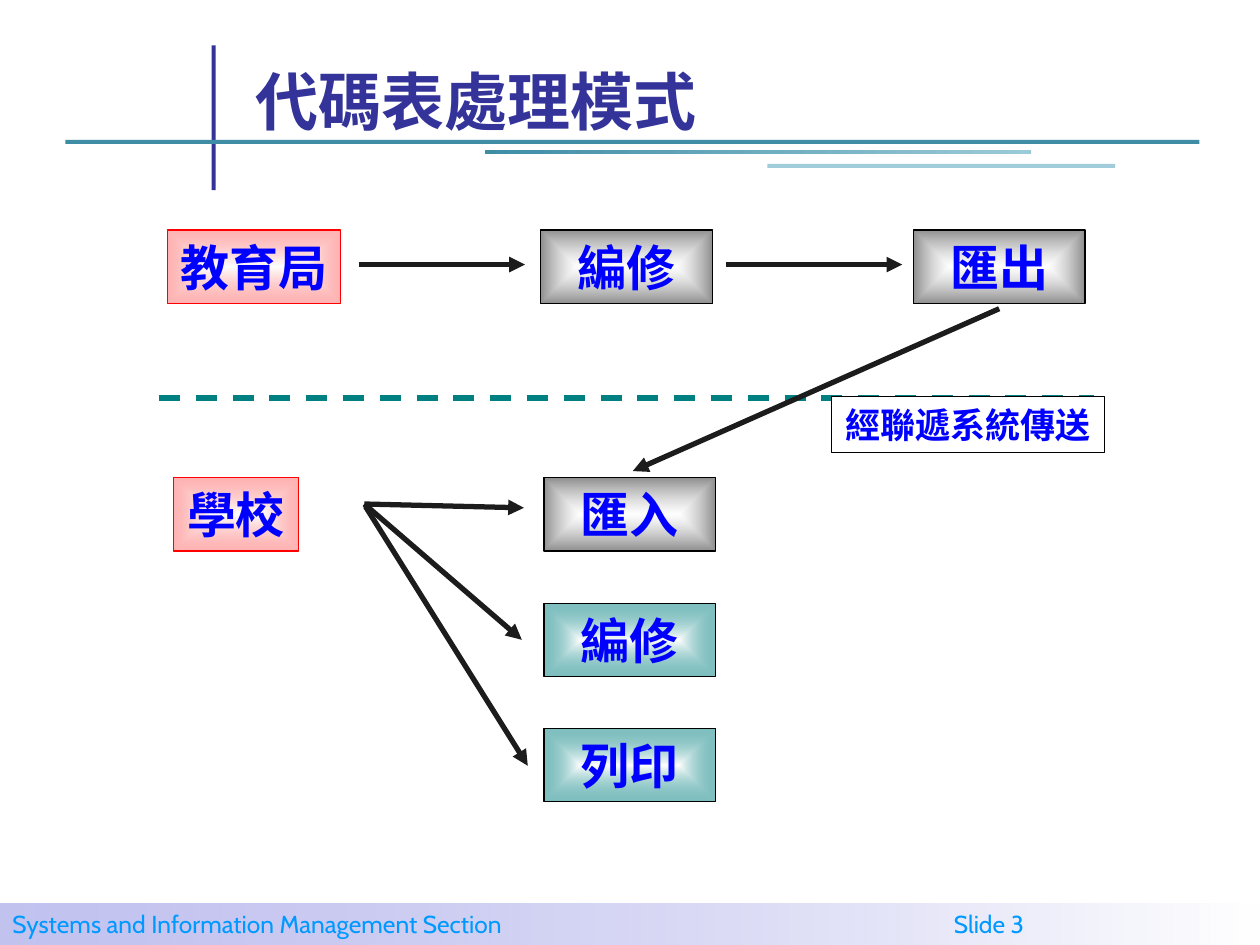
from lxml import etree
from pptx import Presentation
from pptx.dml.color import RGBColor
from pptx.enum.dml import MSO_LINE
from pptx.enum.shapes import MSO_CONNECTOR, MSO_SHAPE
from pptx.enum.text import MSO_ANCHOR, PP_ALIGN
from pptx.oxml import parse_xml
from pptx.oxml.ns import nsdecls, qn
from pptx.util import Pt

NAVY = RGBColor(0x33, 0x33, 0x99)
INDIGO = RGBColor(0x33, 0x33, 0xCC)
STEEL = RGBColor(0x3F, 0x8D, 0xA5)
PALE_STEEL = RGBColor(0x9B, 0xCA, 0xD9)
LIGHT_STEEL = RGBColor(0xA1, 0xCD, 0xDB)
SKY = RGBColor(0x00, 0x99, 0xFF)
BLUE = RGBColor(0x00, 0x00, 0xFF)
RED = RGBColor(0xFF, 0x00, 0x00)
TEAL = RGBColor(0x00, 0x80, 0x80)
CHARCOAL = RGBColor(0x1C, 0x1C, 0x1C)
BLACK = RGBColor(0x00, 0x00, 0x00)
WHITE = RGBColor(0xFF, 0xFF, 0xFF)

CJK = "Noto Sans CJK SC"
LATIN = "Cabin"

# Gradient stops as (colour, opacity in percent), centre to edge or left to right
ACTOR = [(WHITE, 50), (RED, 30)]
TRANSFER = [(WHITE, 30), (CHARCOAL, 50)]
LOCAL = [(WHITE, 100), (TEAL, 50)]
RULE_FADE = [(STEEL, 100), (PALE_STEEL, 100)]
FOOTER_FADE = [(INDIGO, 30), (WHITE, 50)]

# Left, top, width, height, fill
RULES = [
    (121, 25.9, 2.2, 82.8, NAVY),
    (37.4, 79.9, 648, 2.3, STEEL),
    (277.2, 85.7, 311.8, 2.3, RULE_FADE),
    (438.5, 93.6, 198.7, 2.3, LIGHT_STEEL),
]
TITLE = "代碼表處理模式"
FOOTER = ("Systems and Information Management Section", "Slide 3")

BUREAU_TOP, SCHOOL_TOP, STEP_PITCH = 131.5, 273, 71.7
BOX_W, BOX_H = 98, 41.8
# Text, left, top, width, fill, outline
BOXES = [
    ("教育局", 95.6, BUREAU_TOP, 99.2, ACTOR, RED),
    ("編修", 309, BUREAU_TOP, BOX_W, TRANSFER, BLACK),
    ("匯出", 522, BUREAU_TOP, BOX_W, TRANSFER, BLACK),
    ("學校", 99.2, SCHOOL_TOP, 71.3, ACTOR, RED),
] + [
    (text, 310.8, SCHOOL_TOP + i * STEP_PITCH, BOX_W, fill, BLACK)
    for i, (text, fill) in enumerate(
        [("匯入", TRANSFER), ("編修", LOCAL), ("列印", LOCAL)])
]
DIVIDER = (90.8, 227.4, 625, 227.4)
ARROWS = [
    (205.2, 151.2, 300, 151.2),
    (414.6, 151.2, 515.6, 151.2),
    (571, 176.4, 361.6, 269.2),
    (208.2, 288, 299.4, 290.2),
    (208.2, 288, 298.2, 365.6),
    (208.8, 289.4, 301.6, 437.6),
]


def set_gradient(s, stops, from_centre):
    stop_xml = "".join(
        f'<a:gs pos="{i * 100000}"><a:srgbClr val="{color}">'
        f'<a:alpha val="{alpha * 1000}"/></a:srgbClr></a:gs>'
        for i, (color, alpha) in enumerate(stops))
    if from_centre:
        direction = ('<a:path path="rect"><a:fillToRect l="50000" t="50000" '
                     'r="50000" b="50000"/></a:path>')
    else:
        direction = '<a:lin ang="0" scaled="1"/>'
    grad = parse_xml(f'<a:gradFill {nsdecls("a")} rotWithShape="1">'
                     f'<a:gsLst>{stop_xml}</a:gsLst>{direction}</a:gradFill>')
    s.element.spPr.find(qn("a:prstGeom")).addnext(grad)


def add_rect(slide, x, y, w, h, fill, outline=None):
    """Add a rectangle; a list as fill is a gradient, from the centre if outlined."""
    s = slide.shapes.add_shape(MSO_SHAPE.RECTANGLE, Pt(x), Pt(y), Pt(w), Pt(h))
    s.shadow.inherit = False
    if isinstance(fill, list):
        set_gradient(s, fill, outline is not None)
    else:
        s.fill.solid()
        s.fill.fore_color.rgb = fill
    if outline is None:
        s.line.fill.background()
    else:
        s.line.color.rgb = outline
        s.line.width = Pt(0.75)
    return s


def set_text(s, text, size, color, font=CJK, bold=True,
             align=PP_ALIGN.CENTER, anchor=MSO_ANCHOR.MIDDLE, wrap=False):
    tf = s.text_frame
    tf.word_wrap = wrap
    tf.vertical_anchor = anchor
    tf.margin_top = tf.margin_bottom = 0
    p = tf.paragraphs[0]
    p.alignment = align
    r = p.add_run()
    r.text = text
    r.font.size = Pt(size)
    r.font.bold = bold
    r.font.color.rgb = color
    r.font.name = font
    etree.SubElement(r.font._element, qn("a:ea"), typeface=font)
    return p


def add_line(slide, ends, color):
    c = slide.shapes.add_connector(MSO_CONNECTOR.STRAIGHT, *map(Pt, ends))
    c.line.color.rgb = color
    c.line.width = Pt(3)
    etree.SubElement(c.element.spPr, qn("a:effectLst"))
    return c


def add_arrow(slide, ends):
    c = add_line(slide, ends, CHARCOAL)
    etree.SubElement(c.line._get_or_add_ln(), qn("a:tailEnd"), type="triangle")


def add_footer(slide):
    s = add_rect(slide, 0, 516.2, 720, 23.8, FOOTER_FADE)
    p = set_text(s, "\t".join(FOOTER), 14, SKY, LATIN, False, PP_ALIGN.LEFT, wrap=True)
    tabs = etree.SubElement(p._p.get_or_add_pPr(), qn("a:tabLst"))
    etree.SubElement(tabs, qn("a:tab"), pos=str(Pt(538)), algn="l")


def main():
    prs = Presentation()
    prs.slide_width, prs.slide_height = Pt(720), Pt(540)
    slide = prs.slides.add_slide(prs.slide_layouts[6])

    for rule in RULES:
        add_rect(slide, *rule)
    add_footer(slide)
    title = slide.shapes.add_textbox(Pt(139), Pt(20.2), Pt(563.8), Pt(58.5))
    set_text(title, TITLE, 36, NAVY, align=PP_ALIGN.LEFT,
             anchor=MSO_ANCHOR.BOTTOM, wrap=True)

    for text, x, y, w, fill, outline in BOXES:
        set_text(add_rect(slide, x, y, w, BOX_H, fill, outline), text, 28, BLUE)
    add_line(slide, DIVIDER, TEAL).line.dash_style = MSO_LINE.DASH
    for ends in ARROWS:
        add_arrow(slide, ends)
    label = add_rect(slide, 475.2, 226.8, 156, 31.7, WHITE, BLACK)
    set_text(label, "經聯遞系統傳送", 20, BLUE)

    prs.save("out.pptx")


if __name__ == "__main__":
    main()
